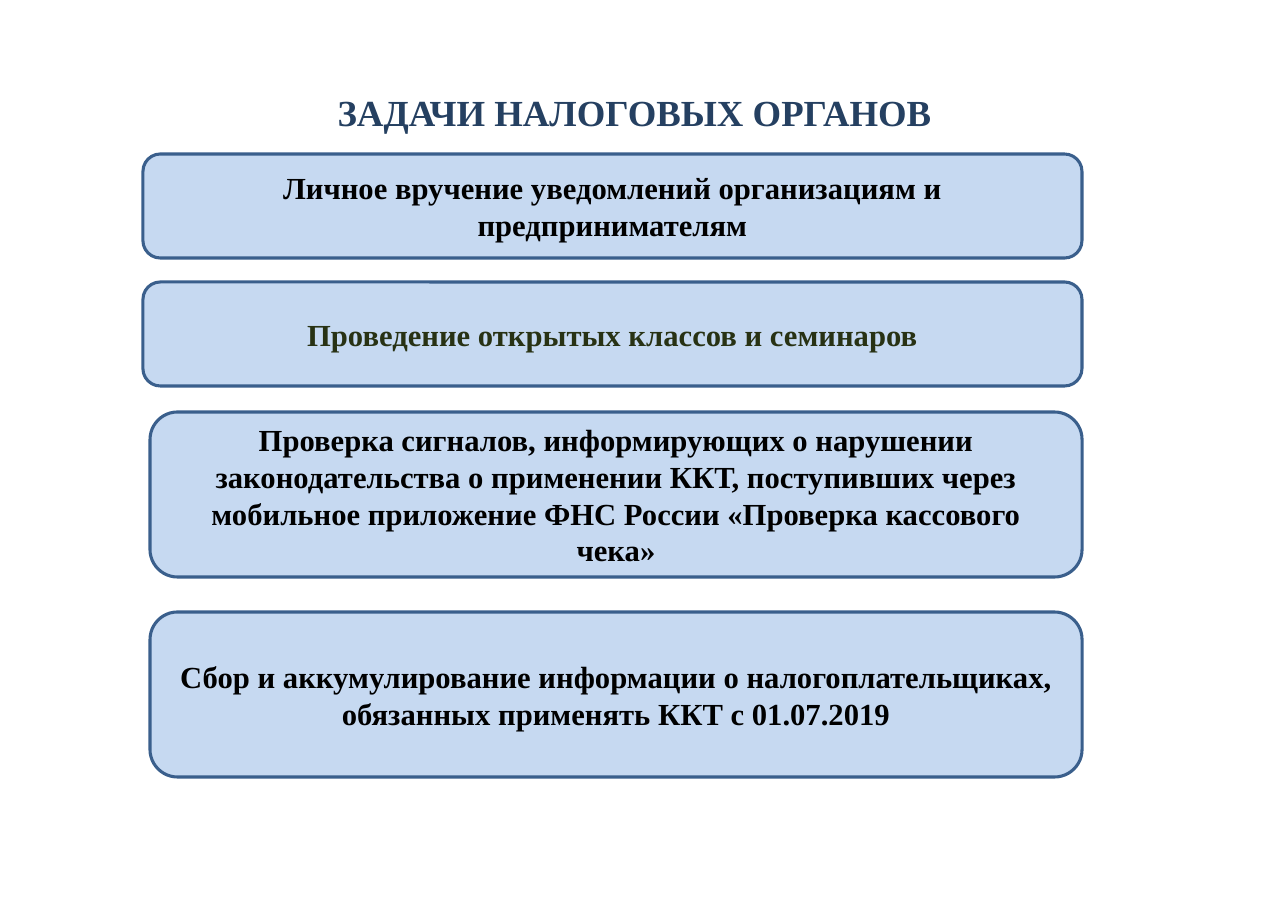
from pptx import Presentation
from pptx.dml.color import RGBColor
from pptx.enum.shapes import MSO_SHAPE as Shape
from pptx.enum.text import MSO_ANCHOR as Anchor, MSO_AUTO_SIZE as Auto, PP_ALIGN as Align
from pptx.util import Pt

PX = 8298
NAVY = RGBColor(0x25, 0x40, 0x61)
PALE = RGBColor(0xC6, 0xD9, 0xF1)
EDGE = RGBColor(0x3A, 0x5F, 0x8C)
BLACK = RGBColor(0, 0, 0)
OLIVE = RGBColor(0x28, 0x32, 0x14)

RIGHT = 1082
TASKS = [
    (143, 154, 104, BLACK, "Личное вручение уведомлений организациям и предпринимателям"),
    (143, 282, 104, OLIVE, "Проведение открытых классов и семинаров"),
    (150, 412, 165, BLACK,
     "Проверка сигналов, информирующих о нарушении законодательства о применении ККТ, "
     "поступивших через мобильное приложение ФНС России «Проверка кассового чека»"),
    (150, 612, 165, BLACK,
     "Сбор и аккумулирование информации о налогоплательщиках, "
     "обязанных применять ККТ с 01.07.2019"),
]


def write(frame, text, size, color):
    frame.word_wrap = True
    frame.auto_size = Auto.NONE
    frame.vertical_anchor = Anchor.MIDDLE
    para = frame.paragraphs[0]
    para.text = text
    para.alignment = Align.CENTER
    font = para.font
    font.name = "Times New Roman"
    font.size = Pt(size)
    font.bold = True
    font.color.rgb = color


deck = Presentation()
deck.slide_width = 1288 * PX
deck.slide_height = 911 * PX
slide = deck.slides.add_slide(deck.slide_layouts[5])

title = slide.shapes.title
title.left, title.top = 168 * PX, 47 * PX
title.width, title.height = 933 * PX, 130 * PX
frame = title.text_frame
frame.margin_left = frame.margin_right = 0
frame.margin_top = frame.margin_bottom = 0
write(frame, "ЗАДАЧИ НАЛОГОВЫХ ОРГАНОВ", 24, NAVY)

for left, top, height, color, text in TASKS:
    box = slide.shapes.add_shape(
        Shape.ROUNDED_RECTANGLE, left * PX, top * PX, (RIGHT - left) * PX, height * PX)
    box.shadow.inherit = False
    box.fill.solid()
    box.fill.fore_color.rgb = PALE
    box.line.color.rgb = EDGE
    box.line.width = Pt(2)
    write(box.text_frame, text, 20, color)

deck.save("out.pptx")
